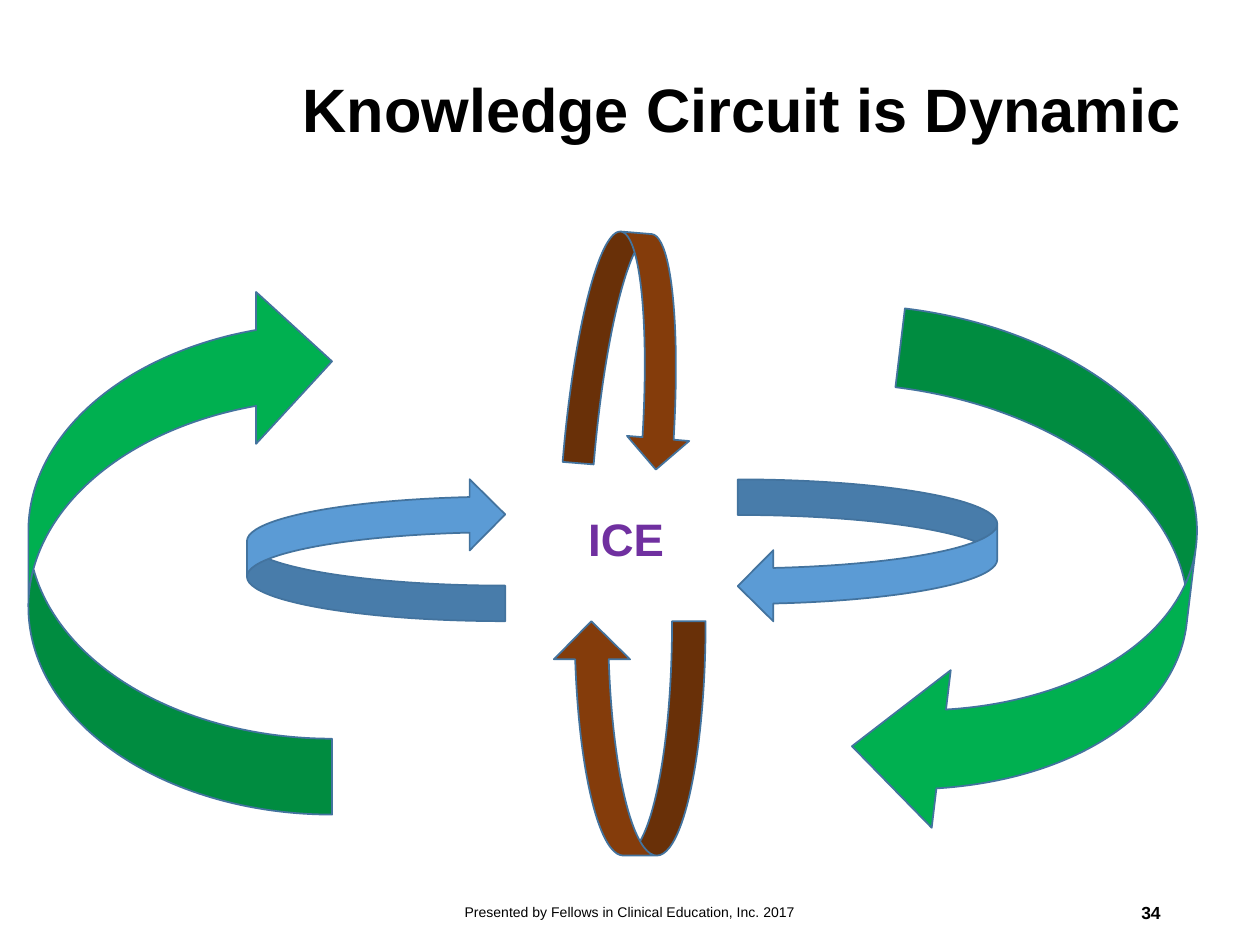
from pptx import Presentation
from pptx.dml.color import RGBColor
from pptx.enum.shapes import MSO_SHAPE
from pptx.enum.text import MSO_ANCHOR, PP_ALIGN
from pptx.util import Inches, Pt

ARROW = MSO_SHAPE.CURVED_DOWN_ARROW
MIDDLE = MSO_ANCHOR.MIDDLE
CENTER, RIGHT = PP_ALIGN.CENTER, PP_ALIGN.RIGHT
FONT = "Arial"
COLORS = {
    "text": "000000",
    "core": "7030A0",
    "inner": "5B9BD5",
    "vertical": "843C0B",
    "outer": "00B050",
    "outline": "43739E",
}
COLS, ROWS = 100, 75
WIDTH, HEIGHT = Inches(10), Inches(7.5)

LOOPS = [
    ((63.2, 33.4, 11.3, 20.6), 90, "inner", (0.25, 0.5, 0.25)),
    ((24.2, 33.4, 11.3, 20.5), 270, "inner", (0.25, 0.5, 0.25)),
    ((45.4, 18.5, 9.9, 18.6), 4.7, "vertical", (0.25, 0.5, 0.25)),
    ((43.9, 49.3, 12.1, 18.6), 180, "vertical", (0.22, 0.5, 0.25)),
    ((-6.7, 31.6, 42, 24.1), 270, "outer", (0.25, 0.5, 0.25)),
    ((61.2, 33.9, 41.3, 25.2), 96.9, "outer", (0.25, 0.5, 0.28)),
]


def rgb(name):
    return RGBColor.from_string(COLORS[name])


def place(box):
    x, y, w, h = box
    col, row = WIDTH / COLS, HEIGHT / ROWS
    return round(x * col), round(y * row), round(w * col), round(h * row)


def write(sp, text, size, align=CENTER, bold=False, color="text"):
    tf = sp.text_frame
    tf.word_wrap = True
    tf.vertical_anchor = MIDDLE
    p = tf.paragraphs[0]
    p.alignment = align
    r = p.add_run()
    r.text = text
    r.font.name = FONT
    r.font.size = Pt(size)
    r.font.bold = bold
    r.font.color.rgb = rgb(color)
    return p


def add_title(s, box, text):
    sp = s.shapes.title
    sp.left, sp.top, sp.width, sp.height = place(box)
    p = write(sp, text, 35, bold=True)
    p.line_spacing = 0.9


def add_label(s, box, text, size, **style):
    write(s.shapes.add_textbox(*place(box)), text, size, **style)


def add_loop(s, box, rotation, color, adjustments):
    sp = s.shapes.add_shape(ARROW, *place(box))
    sp.rotation = rotation
    sp.shadow.inherit = False
    for i, value in enumerate(adjustments):
        sp.adjustments[i] = value
    sp.fill.solid()
    sp.fill.fore_color.rgb = rgb(color)
    sp.line.color.rgb = rgb("outline")
    sp.line.width = Pt(1)


def add_footer(s, box):
    x, y, w, h = box
    add_label(s, (x, y, 33.8, h),
              "Presented by Fellows in Clinical Education, Inc. 2017", 8)
    add_label(s, (x + w - 22.5, y, 22.5, h), "34", 10, align=RIGHT, bold=True)


def main():
    prs = Presentation()
    prs.slide_width, prs.slide_height = WIDTH, HEIGHT
    s = prs.slides.add_slide(prs.slide_layouts[5])
    add_title(s, (17.8, 1.2, 82.2, 15.4), "Knowledge Circuit is Dynamic")
    add_label(s, (44.7, 39.7, 10, 6), "ICE", 26, bold=True, color="core")
    add_footer(s, (33.1, 70.4, 60, 4))
    for loop in LOOPS:
        add_loop(s, *loop)
    prs.save("out.pptx")


if __name__ == "__main__":
    main()
